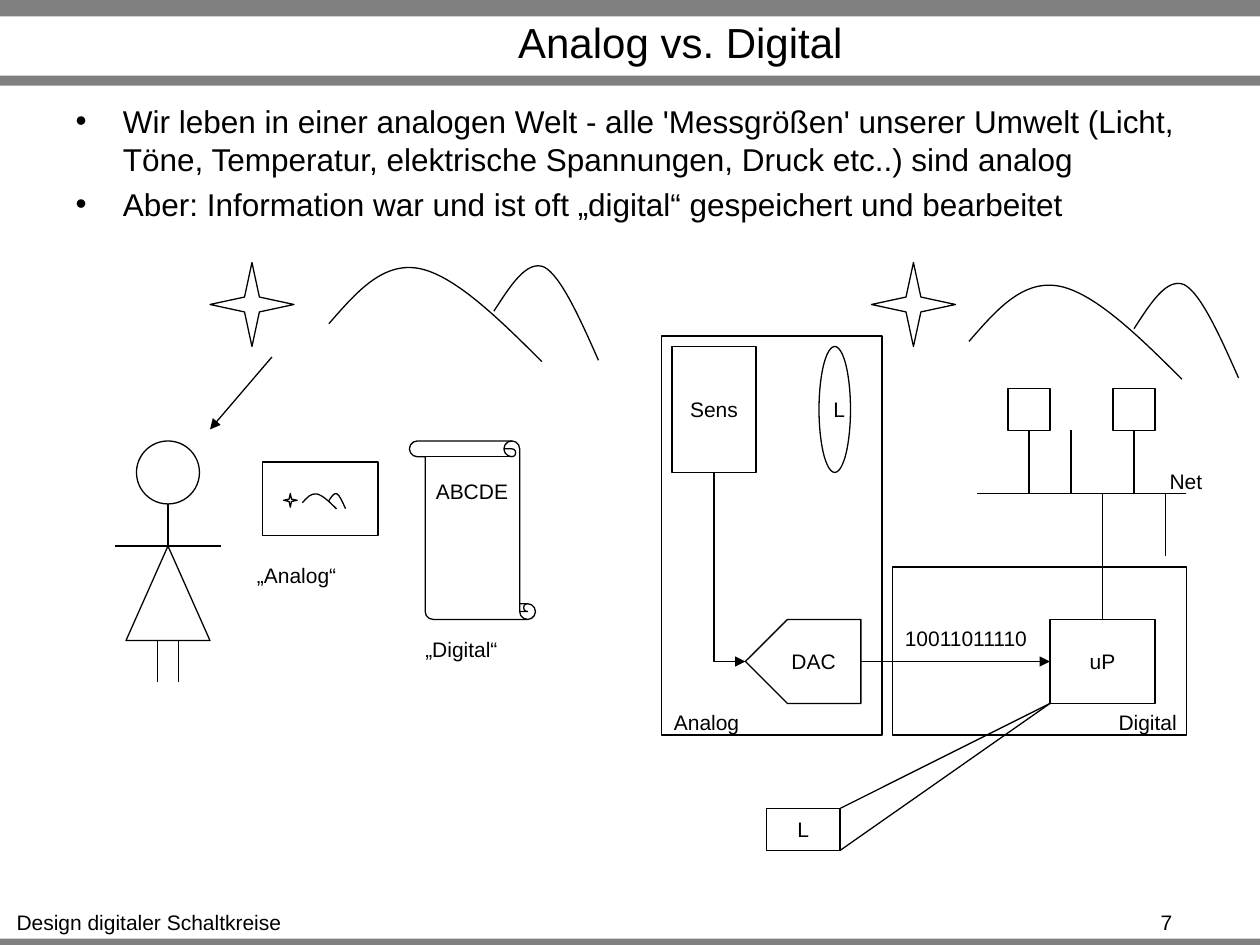
from lxml import etree
from pptx import Presentation
from pptx.dml.color import RGBColor
from pptx.enum.shapes import MSO_CONNECTOR, MSO_SHAPE
from pptx.enum.text import MSO_ANCHOR, MSO_AUTO_SIZE, PP_ALIGN
from pptx.oxml.ns import qn
from pptx.util import Inches, Pt

BLACK = RGBColor(0, 0, 0)
GRAY = RGBColor(0x80, 0x80, 0x80)
STRAIGHT = MSO_CONNECTOR.STRAIGHT
RECT, OVAL, STAR = MSO_SHAPE.RECTANGLE, MSO_SHAPE.OVAL, MSO_SHAPE.STAR_4_POINT
SCROLL, TRIANGLE, PLATE = MSO_SHAPE.VERTICAL_SCROLL, MSO_SHAPE.ISOSCELES_TRIANGLE, MSO_SHAPE.PENTAGON
CENTER, LEFT = PP_ALIGN.CENTER, PP_ALIGN.LEFT
MIDDLE, TOP = MSO_ANCHOR.MIDDLE, MSO_ANCHOR.TOP
FIT, NO_FIT = MSO_AUTO_SIZE.SHAPE_TO_FIT_TEXT, MSO_AUTO_SIZE.NONE
FONT = "Arial"
GRID = 12

TITLE = "Analog vs. Digital"
BULLETS = [
    "Wir leben in einer analogen Welt - alle 'Messgrößen' unserer Umwelt (Licht, Töne, "
    "Temperatur, elektrische Spannungen, Druck etc..) sind analog",
    "Aber: Information war und ist oft „digital“ gespeichert und bearbeitet",
]
BARS = [(0, 0.13), (0.6, 0.08), (7.45, 0.08)]

SHAPES = [
    (SCROLL, 39, 42, 12, 17, ""),
    (OVAL, 13, 42, 6, 6, ""),
    (TRIANGLE, 12, 52, 8, 9, ""),
    (RECT, 25, 44, 11, 7, ""),
    (STAR, 20, 25, 8, 8, ""),
    (STAR, 27, 47, 1.3, 1.3, ""),
    (STAR, 83, 25, 8, 8, ""),
    (RECT, 63, 32, 21, 38, ""),
    (RECT, 85, 54, 28, 16, ""),
    (RECT, 64, 33, 8, 12, "Sens"),
    (OVAL, 78, 33, 3, 12, "L"),
    (PLATE, 71, 59, 11, 8, "DAC"),
    (RECT, 100, 59, 10, 8, "uP"),
    (RECT, 96, 37, 4, 4, ""),
    (RECT, 106, 37, 4, 4, ""),
    (RECT, 73, 77, 7, 4, "L"),
]
FLIPPED = {SCROLL, PLATE}

LINES = [
    (16, 48, 16, 52), (11, 52, 21, 52), (15, 61, 15, 65), (17, 61, 17, 65),
    (68, 63, 68, 45), (105, 59, 105, 47), (113, 47, 93, 47),
    (98, 47, 98, 41), (102, 47, 102, 41), (108, 47, 108, 41), (111, 53, 111, 47),
    (100, 67, 80, 77), (100, 67, 80, 81),
]
ARROWS = [(25.9, 34, 20, 40.9), (68, 63, 71, 63), (82, 63, 100, 63)]

LABELS = [
    ("Design digitaler Schaltkreise", 0.3, 86, 27.8),
    ("7", 107.9, 86, 6.4),
    ("„Analog“", 23.25, 53, 10),
    ("ABCDE", 40.25, 45, 9.4),
    ("„Digital“", 39.25, 60, 9.4),
    ("10011011110", 84.8, 59, 14.4),
    ("Analog", 63, 67, 8.6),
    ("Digital", 105.3, 67, 8),
    ("Net", 110.2, 44, 5.5),
]

HILLS = [
    [(0, 0.44), (0.21, 0.2), (0.42, -0.05), (0.71, 0), (0.99, 0.05), (1.34, 0.39), (1.69, 0.74)],
    [(1.31, 0.34), (1.44, 0.14), (1.57, -0.07), (1.71, -0.01), (1.84, 0.06), (1.99, 0.39), (2.14, 0.73)],
]
LANDSCAPES = [(2.61, 2.13, 1), (7.69, 2.27, 1), (2.4, 3.92, 0.16)]


def grid(*values):
    return [Inches(v / GRID) for v in values]


def write(sp, lines, size, align, anchor):
    tf = sp.text_frame
    tf.text = "\n".join(lines)
    tf.vertical_anchor = anchor
    for p in tf.paragraphs:
        p.alignment = align
        for r in p.runs:
            r.font.name, r.font.size, r.font.color.rgb = FONT, Pt(size), BLACK
    return tf


def outline(sp):
    sp.shadow.inherit = False
    sp.fill.background()
    sp.line.color.rgb = BLACK
    sp.line.width = Pt(0.75)


def add_line(shapes, ends, arrow=False):
    line = shapes.add_connector(STRAIGHT, *grid(*ends))
    line.line.color.rgb = BLACK
    line.line.width = Pt(0.75)
    if arrow:
        etree.SubElement(line.line._get_or_add_ln(), qn("a:tailEnd"), type="triangle")
    etree.SubElement(line._element.spPr, qn("a:effectLst"))


def add_hill(shapes, hill, left, top, scale):
    points = [(Inches(left + x * scale), Inches(top + y * scale)) for x, y in hill]
    anchors = points[::3]
    fb = shapes.build_freeform(*anchors[0])
    fb.add_line_segments(anchors[1:], close=False)
    sp = fb.convert_to_shape()
    outline(sp)
    for i, segment in enumerate(list(sp._element.iter(qn("a:lnTo")))):
        curve = etree.Element(qn("a:cubicBezTo"))
        for x, y in points[3 * i + 1:3 * i + 4]:
            etree.SubElement(curve, qn("a:pt"), x=str(x - sp.left), y=str(y - sp.top))
        segment.getparent().replace(segment, curve)


def place(sp, left, top, width, height):
    sp.left, sp.top, sp.width, sp.height = map(Inches, (left, top, width, height))


def main():
    prs = Presentation()
    prs.slide_width, prs.slide_height = Inches(10), Inches(7.5)
    s = prs.slides.add_slide(prs.slide_layouts[1])
    shapes = s.shapes

    for top, height in BARS:
        sp = shapes.add_shape(RECT, 0, Inches(top), prs.slide_width, Inches(height))
        sp.shadow.inherit = False
        sp.fill.solid()
        sp.fill.fore_color.rgb = GRAY
        sp.line.fill.background()

    place(shapes.title, 1.3, 0.14, 8.2, 0.38)
    write(shapes.title, [TITLE], 24, CENTER, MIDDLE).auto_size = NO_FIT

    body = s.placeholders[1]
    place(body, 0.5, 0.76, 9, 1.24)
    tf = write(body, BULLETS, 18, LEFT, TOP)
    tf.auto_size = NO_FIT
    for i, p in enumerate(tf.paragraphs):
        pPr = p._p.get_or_add_pPr()
        pPr.set("marL", str(Pt(27)))
        pPr.set("indent", str(-Pt(27)))
        etree.SubElement(pPr, qn("a:buChar"), char="•")
        p.space_before = Pt(4 if i else 0)

    for kind, left, top, width, height, text in SHAPES:
        sp = shapes.add_shape(kind, *grid(left, top, width, height))
        outline(sp)
        if kind in FLIPPED:
            sp._element.spPr.xfrm.set("flipH", "1")
        if text:
            write(sp, [text], 12, CENTER, MIDDLE)

    for left, top, scale in LANDSCAPES:
        for hill in HILLS:
            add_hill(shapes, hill, left, top, scale)

    for ends in LINES:
        add_line(shapes, ends)
    for ends in ARROWS:
        add_line(shapes, ends, arrow=True)

    for text, left, top, width in LABELS:
        sp = shapes.add_textbox(*grid(left, top, width, 3.6))
        tf = write(sp, [text], 12, CENTER, TOP)
        tf.word_wrap = False
        tf.auto_size = FIT

    prs.save("out.pptx")


if __name__ == "__main__":
    main()
